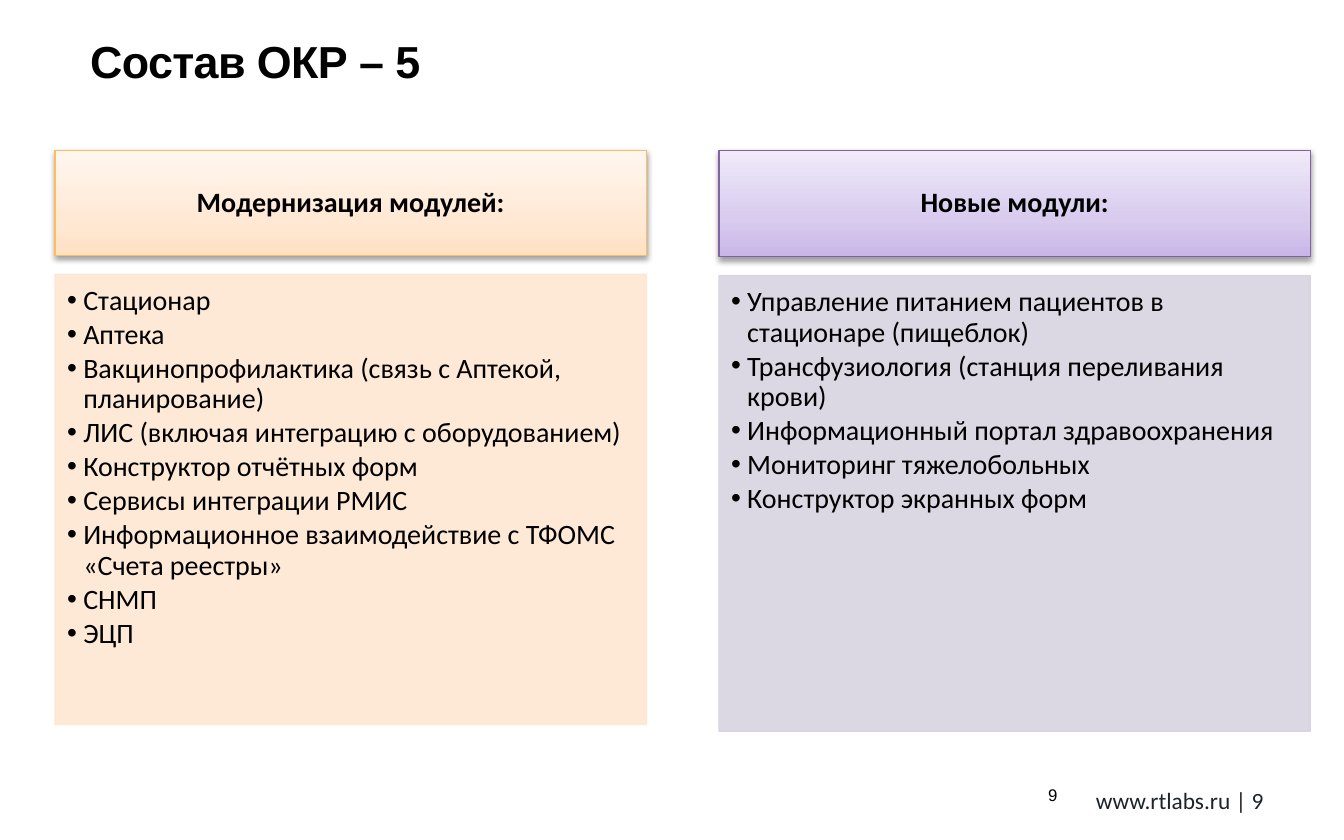
from lxml import etree
from pptx import Presentation
from pptx import util as u
from pptx.dml.color import RGBColor
from pptx.enum import shapes, text
from pptx.oxml import ns, parse_xml

COLORS = {
    "text": "000000", "footer": "1C2329", "shadow": "000000",
    "orange_line": "FDBC5F", "orange_panel": "FEE7D2",
    "violet_line": "8064A2", "violet_panel": "D8D3E0",
}
COLUMNS = [
    {
        "name": "orange", "left": 0.41, "header_height": 0.78,
        "panel_top": 2.04, "panel_height": 3.35,
        "gradient": [(0, "FFE1C4"), (35, "FFE9D5"), (100, "FFF6EF")],
        "title": "Модернизация модулей:",
        "modules": [
            "Стационар",
            "Аптека",
            "Вакцинопрофилактика (связь с Аптекой, планирование)",
            "ЛИС (включая интеграцию с оборудованием)",
            "Конструктор отчётных форм",
            "Сервисы интеграции РМИС",
            "Информационное взаимодействие с ТФОМС «Счета реестры»",
            "СНМП",
            "ЭЦП",
        ],
    },
    {
        "name": "violet", "left": 5.35, "header_height": 0.79,
        "panel_top": 2.05, "panel_height": 3.39,
        "gradient": [(0, "C9B5E8"), (35, "D8CBEE"), (100, "F0EAF9")],
        "title": "Новые модули:",
        "modules": [
            "Управление питанием пациентов в стационаре (пищеблок)",
            "Трансфузиология (станция переливания крови)",
            "Информационный портал здравоохранения",
            "Мониторинг тяжелобольных",
            "Конструктор экранных форм",
        ],
    },
]


def add_element(parent, tag, **attributes):
    element = etree.SubElement(parent, ns.qn(tag))
    for key, value in attributes.items():
        element.set(key, str(value))
    return element


def write(box, lines, size=15, font="Calibri", color="text", bold=False,
          align=text.PP_ALIGN.LEFT, anchor=text.MSO_ANCHOR.TOP,
          insets=(0.1, 0.05, 0.1, 0.05), indent=0, bullet=False,
          line_spacing=1.0, space_after=0, tracking=None):
    """Fill a shape with one paragraph per line; insets run left, top, right, bottom."""
    frame = box.text_frame
    frame.word_wrap = True
    frame.auto_size = text.MSO_AUTO_SIZE.NONE
    frame.vertical_anchor = anchor
    (frame.margin_left, frame.margin_top,
     frame.margin_right, frame.margin_bottom) = map(u.Inches, insets)
    for index, line in enumerate(lines):
        para = frame.add_paragraph() if index else frame.paragraphs[0]
        properties = para._p.get_or_add_pPr()
        properties.set("marL", str(u.Inches(indent)))
        if bullet:
            properties.set("indent", str(-u.Inches(indent)))
            add_element(properties, "a:buFont", typeface="Arial")
            add_element(properties, "a:buChar", char="•")
        para.alignment = align
        para.line_spacing = line_spacing
        para.space_before = u.Pt(0)
        para.space_after = u.Pt(space_after)
        span = para.add_run()
        span.text = line
        span.font.size = u.Pt(size)
        span.font.name = font
        span.font.bold = bold
        span.font.color.rgb = RGBColor.from_string(COLORS[color])
        if tracking is not None:
            span._r.get_or_add_rPr().set("spc", str(round(tracking * 100)))


deck = Presentation()
deck.slide_width = u.Inches(10)
deck.slide_height = u.Inches(6.25)
page = deck.slides.add_slide(deck.slide_layouts[5])

footer = page.shapes.add_textbox(
    u.Inches(7.44), u.Inches(5.79), u.Inches(2.06), u.Inches(0.33))
write(footer, ["www.rtlabs.ru | 9"], size=12.5, color="footer",
      align=text.PP_ALIGN.RIGHT, anchor=text.MSO_ANCHOR.MIDDLE)

title = page.shapes.title
title.left, title.top = u.Inches(0.67), u.Inches(0.25)
title.width, title.height = u.Inches(8.83), u.Inches(1.19)
write(title, ["Состав ОКР – 5"], size=24, font="Arial", bold=True,
      insets=(0, 0, 0, 0), tracking=-0.3)

page_number = page.shapes.add_textbox(
    u.Inches(7.67), u.Inches(5.79), u.Inches(2.33), u.Inches(0.33))
write(page_number, ["9"], size=9, font="Arial", indent=0.03)

for column in COLUMNS:
    left, width = u.Inches(column["left"]), u.Inches(4.4)
    header = page.shapes.add_shape(
        shapes.MSO_SHAPE.RECTANGLE, left, u.Inches(1.12), width,
        u.Inches(column["header_height"]))
    panel = page.shapes.add_shape(
        shapes.MSO_SHAPE.RECTANGLE, left, u.Inches(column["panel_top"]), width,
        u.Inches(column["panel_height"]))
    for box, part in ((header, "line"), (panel, "panel")):
        color = RGBColor.from_string(COLORS[f"{column['name']}_{part}"])
        box.shadow.inherit = False
        box.fill.solid()
        box.fill.fore_color.rgb = color
        box.line.color.rgb = color
        box.line.width = u.Pt(0.75)

    header_properties = header._element.spPr
    gradient = parse_xml(f'<a:gradFill {ns.nsdecls("a")} rotWithShape="1"/>')
    stops = add_element(gradient, "a:gsLst")
    for position, stop_color in column["gradient"]:
        stop = add_element(stops, "a:gs", pos=position * 1000)
        add_element(stop, "a:srgbClr", val=stop_color)
    add_element(gradient, "a:lin", ang=270 * 60000, scaled=0)
    header_properties.replace(
        header_properties.find(ns.qn("a:solidFill")), gradient)

    shadow = add_element(
        header_properties.find(ns.qn("a:effectLst")), "a:outerShdw",
        blurRad=u.Pt(3.1), dist=u.Pt(1.6), dir=90 * 60000, rotWithShape=0)
    shade = add_element(shadow, "a:srgbClr", val=COLORS["shadow"])
    add_element(shade, "a:alpha", val=38000)

    for tint in panel._element.spPr.iter(ns.qn("a:srgbClr")):
        add_element(tint, "a:alpha", val=90000)

    write(header, [column["title"]], bold=True, align=text.PP_ALIGN.CENTER,
          anchor=text.MSO_ANCHOR.MIDDLE, insets=(0.12, 0.07, 0.12, 0.07),
          line_spacing=0.9)
    write(panel, column["modules"], insets=(0.09, 0.09, 0.12, 0.13),
          indent=0.12, bullet=True, line_spacing=0.9, space_after=2)

deck.save("out.pptx")
